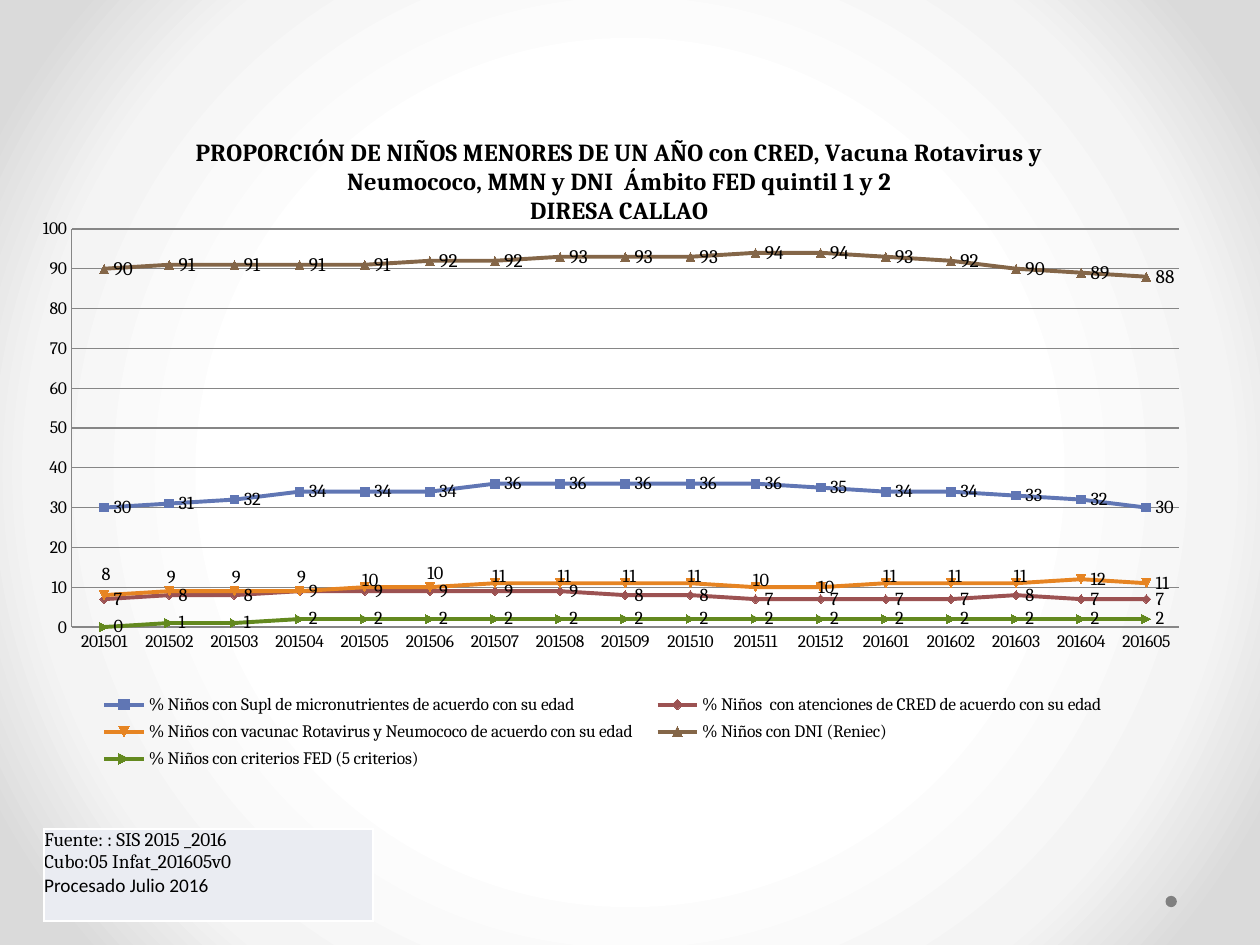
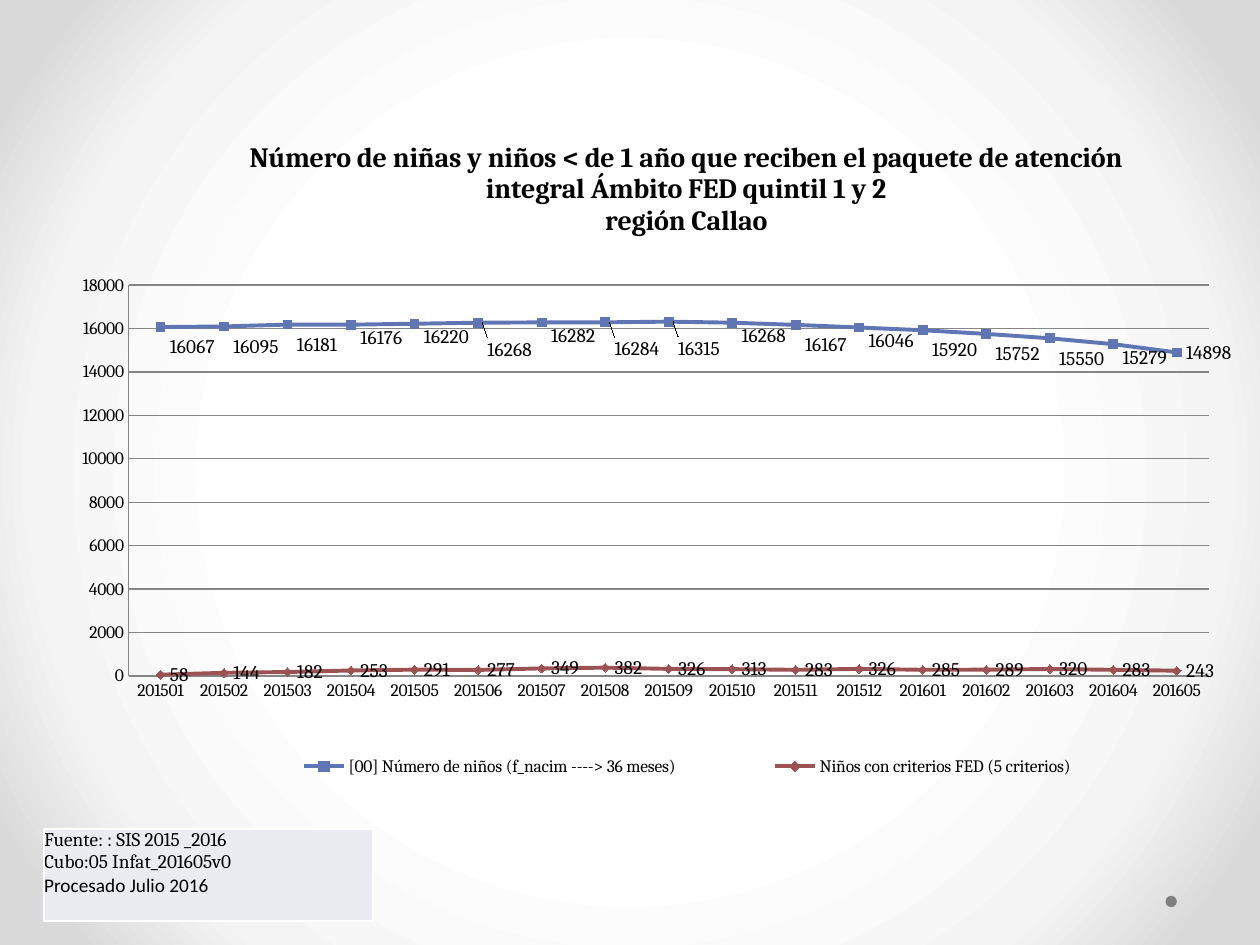
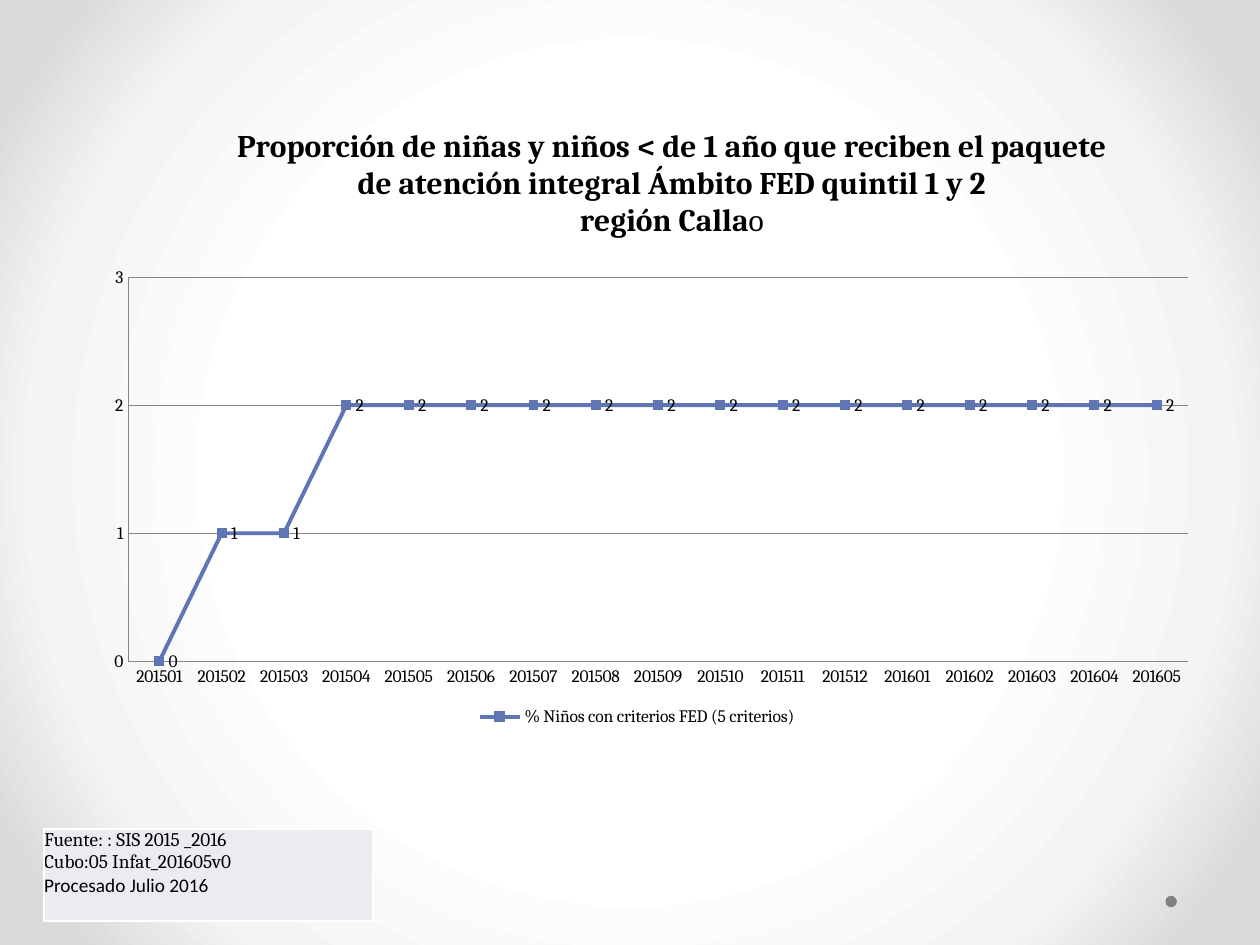
from lxml import etree
from pptx import Presentation
from pptx.chart.data import CategoryChartData
from pptx.dml.color import RGBColor
from pptx.enum.chart import XL_CHART_TYPE, XL_LABEL_POSITION, XL_LEGEND_POSITION, XL_TICK_MARK
from pptx.enum.shapes import MSO_SHAPE
from pptx.enum.text import MSO_ANCHOR
from pptx.oxml import parse_xml
from pptx.oxml.ns import nsdecls, qn
from pptx.util import Inches, Pt

LINE_MARKERS = XL_CHART_TYPE.LINE_MARKERS
RIGHT = XL_LABEL_POSITION.RIGHT
BOTTOM = XL_LEGEND_POSITION.BOTTOM
NO_TICK = XL_TICK_MARK.NONE
OVAL = MSO_SHAPE.OVAL
TOP = MSO_ANCHOR.TOP

FONT = "Cambria"
BLACK, GRID, DOT = "000000", "868686", "808080"
SOURCE_FILL, BORDER = "EAECF2", "FFFFFF"
BACKGROUND = [(50, "FFFFFF"), (76, "F4F4F4"), (92, "DADADA")]
SERIES_COLORS = ["6076B4", "9C5252", "E68422", "846648", "63891F"]

MONTHS = [f"2015{m:02}" for m in range(1, 13)] + [f"2016{m:02}" for m in range(1, 6)]
FED = [0, 1, 1] + [2] * 14
SOURCE = [
    ("Fuente: : SIS 2015 _2016", FONT),
    ("Cubo:05 Infat_201605v0", FONT),
    ("Procesado Julio 2016", "Calibri"),
]

CHARTS = [
    {
        "box": (0.2, 0.84, 9.45, 5.43),
        "title": [
            [("PROPORCIÓN DE NIÑOS MENORES DE UN AÑO con CRED, Vacuna Rotavirus y "
              "Neumococo, MMN y DNI  Ámbito FED quintil 1 y 2", True)],
            [("DIRESA CALLAO", True)],
        ],
        "title_size": 14,
        "title_at": (0.14, 0.04),
        "plot": (0.039, 0.18, 0.93, 0.582),
        "legend": (0.05, 0.85, 0.87, 0.13),
        "axis": (100, 10),
        "series": [
            {"name": "% Niños con Supl de micronutrientes de acuerdo con su edad", "size": 10.5,
             "vals": [30, 31, 32, 34, 34, 34, 36, 36, 36, 36, 36, 35, 34, 34, 33, 32, 30]},
            {"name": "% Niños  con atenciones de CRED de acuerdo con su edad", "size": 10.5,
             "vals": [7, 8, 8, 9, 9, 9, 9, 9, 8, 8, 7, 7, 7, 7, 8, 7, 7]},
            {"name": "% Niños con vacunac Rotavirus y Neumococo de acuerdo con su edad", "size": 10.5,
             "vals": [8, 9, 9, 9, 10, 10, 11, 11, 11, 11, 10, 10, 11, 11, 11, 12, 11],
             "shift_x": -0.01,
             "shifts_y": [-0.03, -0.02, -0.02, -0.02, -0.01, -0.02, -0.01, -0.01,
                          -0.01, -0.01, -0.01, 0, -0.01, -0.01, -0.01]},
            {"name": "% Niños con DNI (Reniec)", "size": 11,
             "vals": [90, 91, 91, 91, 91, 92, 92, 93, 93, 93, 94, 94, 93, 92, 90, 89, 88]},
            {"name": "% Niños con criterios FED (5 criterios)", "size": 10.5, "vals": FED},
        ],
    },
    {
        "box": (0.34, 0.92, 9.47, 5.35),
        "title": [
            [("Número de niñas y niños < de 1 año que reciben el paquete de atención "
              "integral Ámbito FED quintil 1 y 2", True)],
            [("región Callao", True)],
        ],
        "title_size": 16,
        "title_at": (0.17, 0.03),
        "plot": (0.072, 0.251, 0.905, 0.58),
        "legend": (0.14, 0.94, 0.8, 0.05),
        "axis": (18000, 2000),
        "series": [
            {"name": "[00] Número de niños (f_nacim ----> 36 meses)", "size": 11,
             "vals": [16067, 16095, 16181, 16176, 16220, 16268, 16282, 16284, 16315,
                      16268, 16167, 16046, 15920, 15752, 15550, 15279, 14898],
             "shift_x": 0,
             "shifts_y": [0.03, 0.03, 0.03, 0.02, 0.02, 0.04, 0.02, 0.04,
                          0.04, 0.02, 0.03, 0.02, 0.03, 0.03, 0.03, 0.02]},
            {"name": "Niños con criterios FED (5 criterios)", "size": 11,
             "vals": [58, 144, 182, 253, 291, 277, 349, 382, 326,
                      313, 283, 326, 285, 289, 320, 283, 243]},
        ],
    },
    {
        "box": (0.71, 0.92, 8.78, 5.1),
        "title": [
            [("Proporción de niñas y niños < de 1 año que reciben el paquete "
              "de atención integral Ámbito FED quintil 1 y 2", True)],
            [("región Calla", True), ("o", False)],
        ],
        "title_size": 18,
        "title_at": (0.13, 0.01),
        "plot": (0.035, 0.251, 0.958, 0.598),
        "legend": (0.33, 0.91, 0.33, 0.05),
        "axis": (3, 1),
        "series": [
            {"name": "% Niños con criterios FED (5 criterios)", "size": 10, "vals": FED},
        ],
    },
]


def rgb(color):
    return RGBColor.from_string(color)


def style_font(font, size, name=FONT, bold=False):
    font.size = Pt(size)
    font.name = name
    font.bold = bold
    font.color.rgb = rgb(BLACK)


def set_background(s):
    stops = "".join(f'<a:gs pos="{pos * 1000}"><a:srgbClr val="{color}"/></a:gs>'
                    for pos, color in BACKGROUND)
    bg = parse_xml(
        f'<p:bg {nsdecls("p", "a")}><p:bgPr><a:gradFill rotWithShape="1"><a:gsLst>{stops}</a:gsLst>'
        '<a:path path="circle"><a:fillToRect l="50000" t="50000" r="50000" b="50000"/></a:path>'
        '</a:gradFill><a:effectLst/></p:bgPr></p:bg>')
    s.element.cSld.insert(0, bg)


def set_layout(parent, index, x, y, w=None, h=None, inner=False, edge=True):
    for old in parent.findall(qn("c:layout")):
        parent.remove(old)
    layout = etree.Element(qn("c:layout"))
    manual = etree.SubElement(layout, qn("c:manualLayout"))
    values = []
    if inner:
        values.append(("layoutTarget", "inner"))
    if edge:
        values += [("xMode", "edge"), ("yMode", "edge")]
    values += [("x", x), ("y", y), ("w", w), ("h", h)]
    for tag, value in values:
        if value is not None:
            etree.SubElement(manual, qn(f"c:{tag}")).set("val", str(value))
    parent.insert(index, layout)


def add_title(chart, spec_title, size, at):
    title = chart.chart_title
    tf = title.text_frame
    for i, runs in enumerate(spec_title):
        p = tf.paragraphs[0] if i == 0 else tf.add_paragraph()
        for text, bold in runs:
            r = p.add_run()
            r.text = text
            style_font(r.font, size, bold=bold)
    set_layout(title._element, 1, *at)


def style_axes(chart, top, step):
    value_axis, category_axis = chart.value_axis, chart.category_axis
    value_axis.minimum_scale = 0
    value_axis.maximum_scale = top
    value_axis.major_unit = step
    value_axis.has_major_gridlines = True
    value_axis.tick_labels.number_format = "0"
    value_axis.tick_labels.number_format_is_linked = False
    for axis in (value_axis, category_axis):
        axis.major_tick_mark = axis.minor_tick_mark = NO_TICK
        style_font(axis.tick_labels.font, 10)
    for part in (value_axis, category_axis, value_axis.major_gridlines):
        part.format.line.color.rgb = rgb(GRID)
        part.format.line.width = Pt(0.75)


def style_series(series, data, color):
    series.smooth = False
    series.format.line.color.rgb = rgb(color)
    series.format.line.width = Pt(2.25)
    marker = series.marker.format
    marker.fill.solid()
    marker.fill.fore_color.rgb = rgb(color)
    marker.line.color.rgb = rgb(color)
    labels = series.data_labels
    labels.show_value = True
    labels.position = RIGHT
    style_font(labels.font, data["size"])
    for i, dy in enumerate(data.get("shifts_y", [])):
        label = series.points[i].data_label
        style_font(label.font, data["size"])
        label.position = RIGHT
        dLbl = labels._element.xpath(f'c:dLbl[c:idx/@val="{i}"]')[0]
        set_layout(dLbl, 1, data["shift_x"], dy, edge=False)


def add_line_chart(s, content):
    data = CategoryChartData(number_format="0")
    data.categories = MONTHS
    for item in content["series"]:
        data.add_series(item["name"], item["vals"])
    box = [Inches(v) for v in content["box"]]
    chart = s.shapes.add_chart(LINE_MARKERS, *box, data).chart
    style_font(chart.font, 10)
    add_title(chart, content["title"], content["title_size"], content["title_at"])
    style_axes(chart, *content["axis"])
    chart.plots[0].vary_by_categories = False
    for series, item, color in zip(chart.plots[0].series, content["series"], SERIES_COLORS):
        style_series(series, item, color)
    chart.has_legend = True
    chart.legend.position = BOTTOM
    chart.legend.include_in_layout = False
    style_font(chart.legend.font, 10)
    set_layout(chart.legend._element, 1, *content["legend"])
    plot_area = chart._chartSpace.chart.plotArea
    set_layout(plot_area, 0, *content["plot"], inner=True)


def add_source(s):
    table = s.shapes.add_table(1, 1, Inches(0.35), Inches(6.58), Inches(2.61), Inches(0.73)).table
    table.first_row = table.horz_banding = False
    cell = table.cell(0, 0)
    cell.margin_left = cell.margin_right = cell.margin_top = cell.margin_bottom = 0
    cell.vertical_anchor = TOP
    tcPr = cell._tc.get_or_add_tcPr()
    for side in ("lnL", "lnR", "lnT", "lnB"):
        tcPr.append(parse_xml(f'<a:{side} {nsdecls("a")} w="12700"><a:solidFill>'
                              f'<a:srgbClr val="{BORDER}"/></a:solidFill></a:{side}>'))
    cell.fill.solid()
    cell.fill.fore_color.rgb = rgb(SOURCE_FILL)
    tf = cell.text_frame
    for i, (text, font) in enumerate(SOURCE):
        p = tf.paragraphs[0] if i == 0 else tf.add_paragraph()
        p.text = text
        style_font(p.font, 11, font)


def add_dot(s):
    sp = s.shapes.add_shape(OVAL, Inches(9.25), Inches(7.11), Inches(0.09), Inches(0.09))
    sp.shadow.inherit = False
    sp.fill.solid()
    sp.fill.fore_color.rgb = rgb(DOT)
    sp.line.fill.background()


def main():
    prs = Presentation()
    prs.slide_width, prs.slide_height = Inches(10), Inches(7.5)
    for content in CHARTS:
        s = prs.slides.add_slide(prs.slide_layouts[6])
        set_background(s)
        add_dot(s)
        add_line_chart(s, content)
        add_source(s)
    prs.save("out.pptx")


if __name__ == "__main__":
    main()
